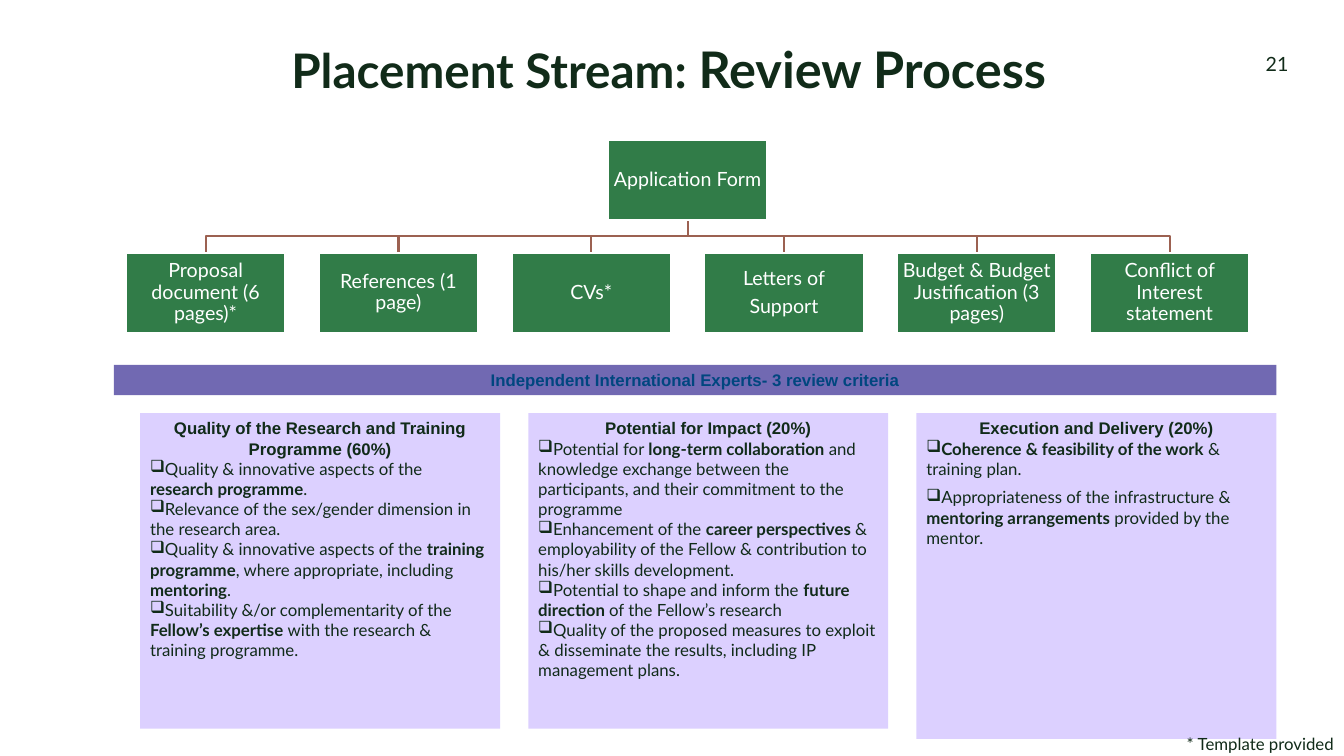
from lxml.etree import SubElement
from pptx import Presentation
from pptx.dml.color import RGBColor
from pptx.enum.shapes import MSO_SHAPE
from pptx.enum.text import MSO_ANCHOR, MSO_AUTO_SIZE, PP_ALIGN
from pptx.oxml.ns import qn
from pptx.util import Inches, Pt

INK = RGBColor(0x11, 0x2B, 0x19)
WHITE = RGBColor(0xFF, 0xFF, 0xFF)
GREEN = RGBColor(0x31, 0x7C, 0x48)
BROWN = RGBColor(0x9C, 0x61, 0x51)
LILAC = RGBColor(0xDC, 0xD0, 0xFF)
PURPLE = RGBColor(0x71, 0x69, 0xB2)
BLUE = RGBColor(0x00, 0x46, 0x7F)

BOX_W, BOX_H = 1.58, 0.79
ROOT_X, ROOT_Y = 6.03, 1.39
CHILD_X, CHILD_Y, CHILD_STEP = 1.25, 2.51, 9.56 / 5
COLUMN_X, COLUMN_Y, COLUMN_W, COLUMN_STEP = 1.39, 4.1, 3.57, 3.85

DOCUMENTS = [
    "Proposal document (6 pages)*",
    "References (1 page)",
    "CVs*",
    "Letters of\nSupport",
    "Budget & Budget Justification (3 pages)",
    "Conflict of Interest statement",
]

CRITERIA = [
    ("Quality of the Research and Training Programme (60%)", 3.13, 0, [
        "Quality & innovative aspects of the **research programme**.",
        "Relevance of the sex/gender dimension in the research area.",
        "Quality & innovative aspects of the **training programme**, where "
        "appropriate, including **mentoring**.",
        "Suitability &/or complementarity of the **Fellow’s expertise **with "
        "the research & training programme.",
    ]),
    ("Potential for Impact (20%)", 3.13, 0, [
        "Potential for **long-term collaboration **and knowledge exchange "
        "between the participants, and their commitment to the programme",
        "Enhancement of the **career perspectives **& employability of the "
        "Fellow & contribution to his/her skills development.",
        "Potential to shape and inform the **future direction **of the "
        "Fellow’s research",
        "Quality of the proposed measures to exploit & disseminate the "
        "results, including IP management plans.",
    ]),
    ("Execution and Delivery (20%)", 3.23, 6, [
        "**Coherence & feasibility of the work **& training plan.",
        "Appropriateness of the infrastructure & **mentoring arrangements "
        "**provided by the mentor.",
    ]),
]


def style(r, size, color=INK, font="Lato", bold=False):
    r.font.size = Pt(size)
    r.font.name = font
    r.font.bold = bold
    r.font.color.rgb = color


def add_marked_runs(p, text, size):
    for i, part in enumerate(text.split("**")):
        if part:
            r = p.add_run()
            r.text = part
            style(r, size, bold=i % 2 == 1)


def add_rect(s, x, y, w, h, fill, line=None):
    sp = s.shapes.add_shape(
        MSO_SHAPE.RECTANGLE, Inches(x), Inches(y), Inches(w), Inches(h))
    sp.shadow.inherit = False
    sp.fill.solid()
    sp.fill.fore_color.rgb = fill
    if line is None:
        sp.line.fill.background()
    else:
        sp.line.color.rgb = line
        sp.line.width = Pt(1.5)
    sp.text_frame.word_wrap = True
    return sp


def add_heading(p, text, color=INK):
    p.text = text
    p.alignment = PP_ALIGN.CENTER
    style(p.runs[0], 12, color, "Arial", True)


def add_document(s, x, y, text):
    tf = add_rect(s, x, y, BOX_W, BOX_H, GREEN, WHITE).text_frame
    tf.margin_left = tf.margin_right = Inches(0.01)
    tf.margin_top = tf.margin_bottom = Inches(0.01)
    tf.vertical_anchor = MSO_ANCHOR.MIDDLE
    tf.text = text
    for p in tf.paragraphs:
        p.alignment = PP_ALIGN.CENTER
        p.line_spacing = 0.9
        p.space_after = Pt(5)
        style(p.runs[0], 14, WHITE)


def add_branch(s, x):
    trunk_x = ROOT_X + BOX_W / 2
    top = ROOT_Y + BOX_H
    middle = (top + CHILD_Y) / 2
    points = [(trunk_x, middle), (x, middle), (x, CHILD_Y)]
    builder = s.shapes.build_freeform(Inches(trunk_x), Inches(top))
    builder.add_line_segments(
        [(Inches(px), Inches(py)) for px, py in points], close=False)
    sp = builder.convert_to_shape()
    sp.shadow.inherit = False
    sp.fill.background()
    sp.line.color.rgb = BROWN
    sp.line.width = Pt(1.5)


def add_criterion(s, x, heading, height, gap, items):
    tf = add_rect(s, x, COLUMN_Y, COLUMN_W, height, LILAC).text_frame
    tf.vertical_anchor = MSO_ANCHOR.TOP
    add_heading(tf.paragraphs[0], heading)
    for item in items:
        p = tf.add_paragraph()
        pPr = p._p.get_or_add_pPr()
        pPr.set("marL", "0")
        pPr.set("indent", "0")
        SubElement(pPr, qn("a:buChar")).set("char", "❑")
        p.alignment = PP_ALIGN.LEFT
        p.space_after = Pt(gap)
        add_marked_runs(p, item, 12)


def add_title(s):
    title = s.shapes.title
    title.left, title.top = Inches(2.79), Inches(0.4)
    title.width, title.height = Inches(9.2), Inches(0.9)
    tf = title.text_frame
    tf.auto_size = MSO_AUTO_SIZE.NONE
    tf.vertical_anchor = MSO_ANCHOR.TOP
    p = tf.paragraphs[0]
    p.alignment = PP_ALIGN.LEFT
    p.line_spacing = 0.9
    for text, size in (("Placement Stream: ", 34), ("Review Process", 36)):
        r = p.add_run()
        r.text = text
        style(r, size, bold=True)


def add_label(s, x, y, w, h, text, size):
    tf = s.shapes.add_textbox(
        Inches(x), Inches(y), Inches(w), Inches(h)).text_frame
    tf.margin_left = tf.margin_right = tf.margin_top = tf.margin_bottom = 0
    tf.word_wrap = True
    tf.text = text
    p = tf.paragraphs[0]
    p.line_spacing = 0.9
    p.alignment = PP_ALIGN.RIGHT
    style(p.runs[0], size)


def main():
    prs = Presentation()
    prs.slide_width, prs.slide_height = Inches(13.33), Inches(7.5)
    s = prs.slides.add_slide(prs.slide_layouts[5])
    add_title(s)
    add_label(s, 12.18, 0.54, 0.6, 0.69, "21", 14)

    child_xs = [CHILD_X + i * CHILD_STEP for i in range(len(DOCUMENTS))]
    for x in child_xs:
        add_branch(s, x + BOX_W / 2)
    add_document(s, ROOT_X, ROOT_Y, "Application Form")
    for x, text in zip(child_xs, DOCUMENTS):
        add_document(s, x, CHILD_Y, text)

    for i, criterion in enumerate(CRITERIA):
        add_criterion(s, COLUMN_X + i * COLUMN_STEP, *criterion)

    tf = add_rect(s, 1.13, 3.62, 11.53, 0.3, PURPLE).text_frame
    tf.vertical_anchor = MSO_ANCHOR.MIDDLE
    add_heading(tf.paragraphs[0],
                "Independent International Experts- 3 review criteria", BLUE)

    add_label(s, 11.2, 7.3, 2.03, 0.19, "* Template provided", 12)
    prs.save("out.pptx")


if __name__ == "__main__":
    main()
